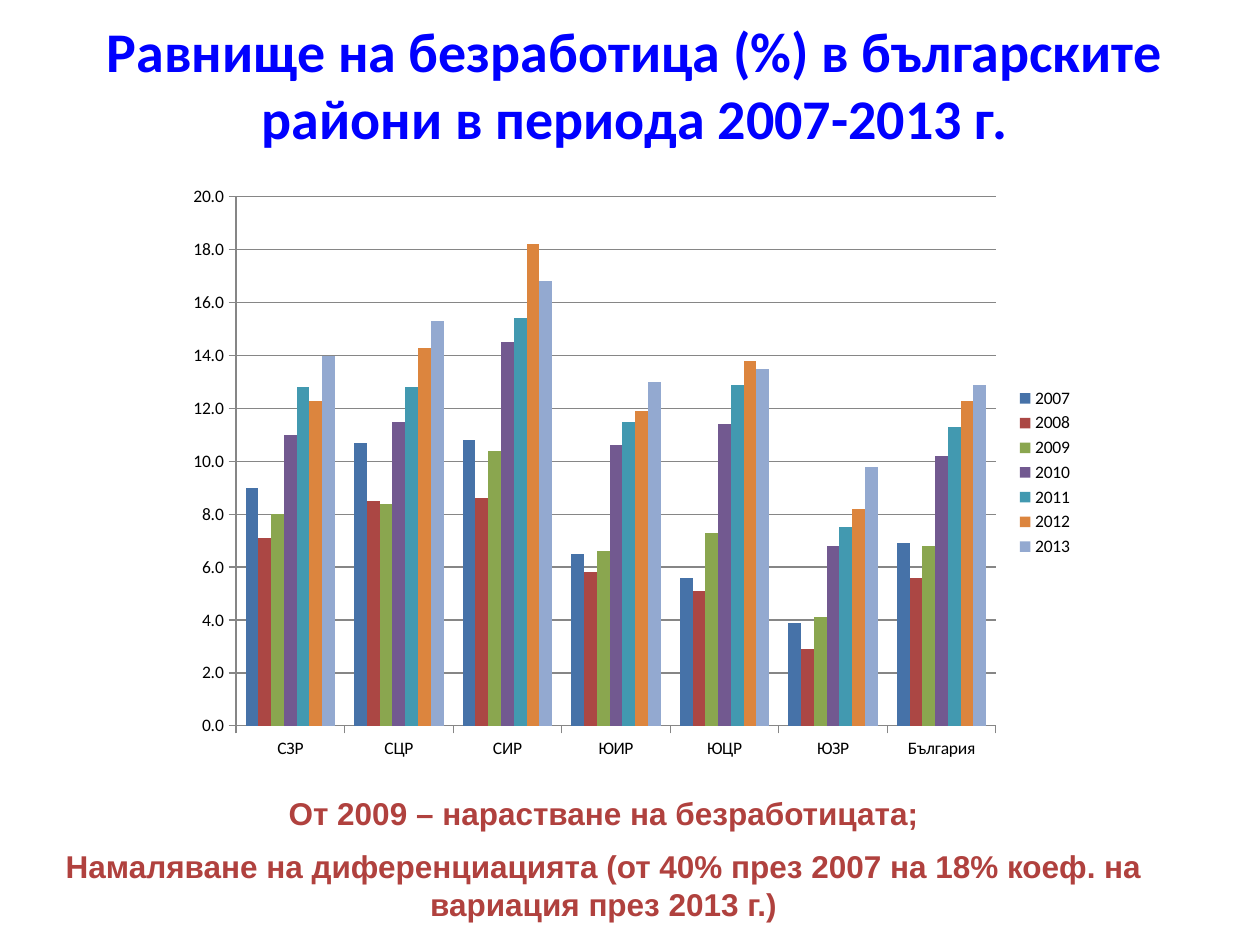
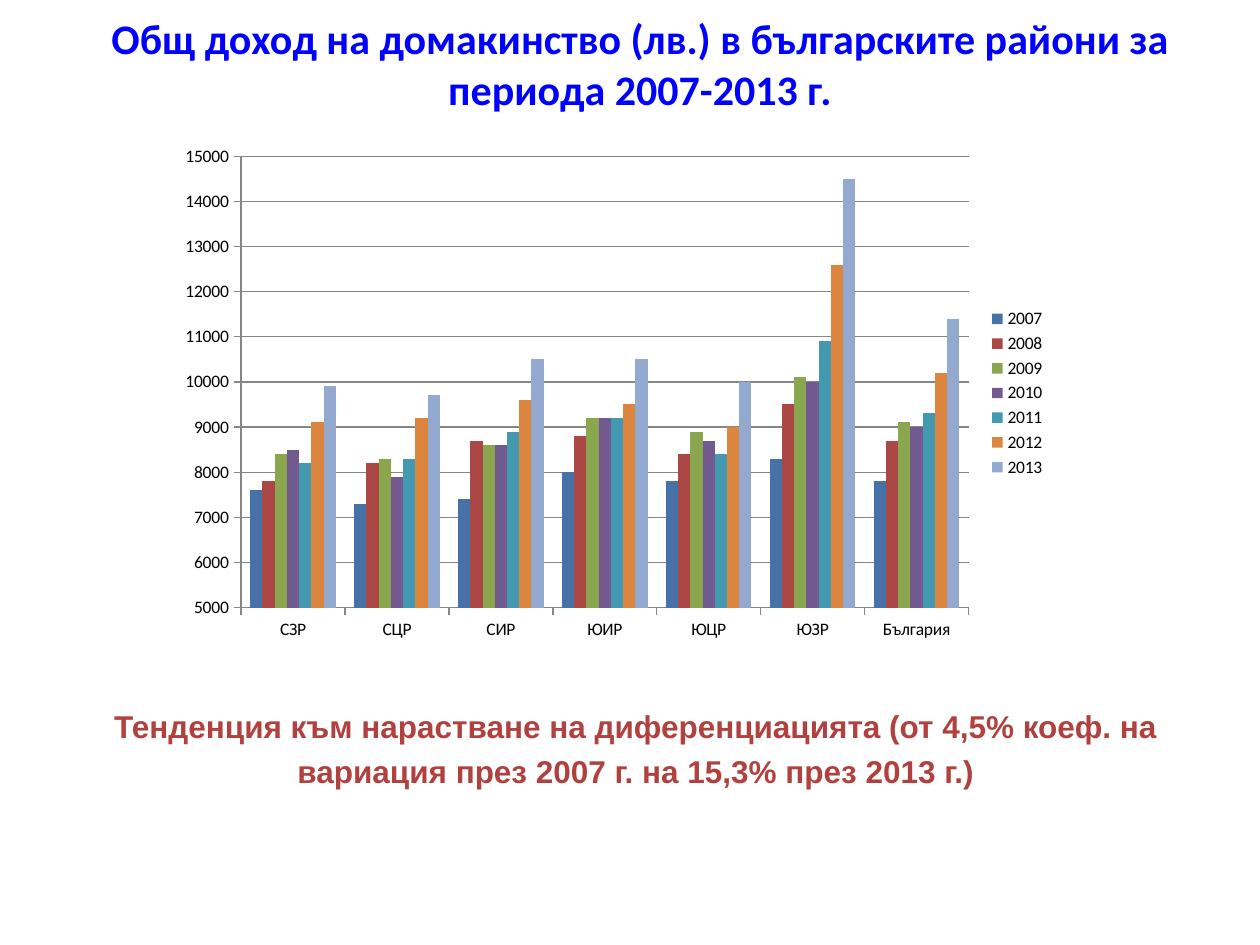
"""Build two slides on jobless rates and income in the Bulgarian regions."""
from dataclasses import dataclass

from pptx import Presentation
from pptx.chart.data import CategoryChartData
from pptx.dml.color import RGBColor
from pptx.enum.chart import XL_CHART_TYPE, XL_LEGEND_POSITION, XL_TICK_MARK
from pptx.enum.text import MSO_ANCHOR, MSO_AUTO_SIZE, PP_ALIGN
from pptx.util import Inches, Pt

COLUMNS = XL_CHART_TYPE.COLUMN_CLUSTERED
RIGHT = XL_LEGEND_POSITION.RIGHT
OUT, NONE = XL_TICK_MARK.OUTSIDE, XL_TICK_MARK.NONE
MIDDLE, TOP = MSO_ANCHOR.MIDDLE, MSO_ANCHOR.TOP
FIXED = MSO_AUTO_SIZE.NONE
CENTER = PP_ALIGN.CENTER


@dataclass(frozen=True)
class Theme:
    """Fonts, type sizes and colours of both slides."""
    head_font: str = "Calibri"
    note_font: str = "Arial"
    note_size: int = 18
    chart_size: int = 10
    paper: str = "FFFFFF"
    head: str = "0000FF"
    note: str = "B0413E"
    ink: str = "000000"
    rule: str = "868686"
    bars: tuple = ("4672A8", "AB4744", "8AA64F", "725990",
                   "4299B0", "DC853E", "93A9D0")


THEME = Theme()
REGIONS = ("СЗР", "СЦР", "СИР", "ЮИР", "ЮЦР", "ЮЗР", "България")
START = 2007

JOBLESS = (
    (9, 10.7, 10.8, 6.5, 5.6, 3.9, 6.9),
    (7.1, 8.5, 8.6, 5.8, 5.1, 2.9, 5.6),
    (8, 8.4, 10.4, 6.6, 7.3, 4.1, 6.8),
    (11, 11.5, 14.5, 10.6, 11.4, 6.8, 10.2),
    (12.8, 12.8, 15.4, 11.5, 12.9, 7.5, 11.3),
    (12.3, 14.3, 18.2, 11.9, 13.8, 8.2, 12.3),
    (14, 15.3, 16.8, 13, 13.5, 9.8, 12.9),
)
INCOME = (
    (7600, 7300, 7400, 8000, 7800, 8300, 7800),
    (7800, 8200, 8700, 8800, 8400, 9500, 8700),
    (8400, 8300, 8600, 9200, 8900, 10100, 9100),
    (8500, 7900, 8600, 9200, 8700, 10000, 9000),
    (8200, 8300, 8900, 9200, 8400, 10900, 9300),
    (9100, 9200, 9600, 9500, 9000, 12600, 10200),
    (9900, 9700, 10500, 10500, 10000, 14500, 11400),
)


def color(code):
    """Turn a hex code into a colour."""
    return RGBColor.from_string(code)


def place(shape, box):
    """Move and size a shape."""
    shape.left, shape.top, shape.width, shape.height = map(Inches, box)


def write(para, text, font, size, tint):
    """Add one bold centred run to a paragraph."""
    para.alignment = CENTER
    run = para.add_run()
    run.text = text
    run.font.name, run.font.size, run.font.bold = font, Pt(size), True
    run.font.color.rgb = color(tint)


def setup(frame, anchor):
    """Make a text frame wrap at a fixed size."""
    frame.word_wrap, frame.auto_size = True, FIXED
    frame.vertical_anchor = anchor


def add_title(slide, text, box, size):
    """Fill the title placeholder."""
    title = slide.shapes.title
    place(title, box)
    setup(title.text_frame, MIDDLE)
    write(title.text_frame.paragraphs[0], text, THEME.head_font, size, THEME.head)


def add_notes(slide, lines, box, spacing):
    """Add the findings below the chart."""
    frame = slide.shapes.add_textbox(*map(Inches, box)).text_frame
    setup(frame, TOP)
    for index, line in enumerate(lines):
        para = frame.add_paragraph() if index else frame.paragraphs[0]
        para.space_before = Pt(THEME.note_size / 2)
        para.line_spacing = spacing
        write(para, line, THEME.note_font, THEME.note_size, THEME.note)


def style_axis(axis):
    """Give an axis its line and outer ticks."""
    axis.major_tick_mark, axis.minor_tick_mark = OUT, NONE
    axis.format.line.color.rgb = color(THEME.rule)
    axis.format.line.width = Pt(0.75)


def add_chart(slide, rows, box, scale, style):
    """Add columns by region with one series a year."""
    data = CategoryChartData(number_format=style)
    data.categories = REGIONS
    for year, row in enumerate(rows, START):
        data.add_series(str(year), row)
    chart = slide.shapes.add_chart(COLUMNS, *map(Inches, box), data).chart
    chart.has_title = False
    chart.font.name, chart.font.size = THEME.head_font, Pt(THEME.chart_size)
    chart.font.color.rgb = color(THEME.ink)
    chart.has_legend = True
    chart.legend.position = RIGHT
    chart.legend.include_in_layout = False

    values = chart.value_axis
    for axis in (chart.category_axis, values):
        style_axis(axis)
    values.minimum_scale, values.maximum_scale, values.major_unit = scale
    values.tick_labels.number_format = style
    values.tick_labels.number_format_is_linked = False
    values.has_major_gridlines = True
    grid = values.major_gridlines.format.line
    grid.color.rgb, grid.width = color(THEME.rule), Pt(0.75)

    plot = chart.plots[0]
    plot.gap_width, plot.vary_by_categories = 150, False
    for series, tint in zip(plot.series, THEME.bars):
        series.invert_if_negative = False
        series.format.fill.solid()
        series.format.fill.fore_color.rgb = color(tint)


def add_slide(deck):
    """Add a plain slide with a title only."""
    slide = deck.slides.add_slide(deck.slide_layouts.get_by_name("Title Only"))
    slide.background.fill.solid()
    slide.background.fill.fore_color.rgb = color(THEME.paper)
    return slide


def main():
    """Build and save the deck."""
    deck = Presentation()
    deck.slide_width, deck.slide_height = Inches(10), Inches(7.5)

    slide = add_slide(deck)
    add_title(slide, "Равнище на безработица (%) в българските райони в периода 2007-2013 г.",
              (0.58, 0.25, 8.92, 0.83), 32)
    add_notes(slide, ("От 2009 – нарастване на безработицата;",
                      "Намаляване на диференциацията (от 40% през 2007 на 18% коеф. на "
                      "вариация през 2013 г.)"),
              (0.33, 6.25, 8.92, 1.16), 1.0)
    add_chart(slide, JOBLESS, (1.39, 1.39, 7.23, 4.72), (0, 20, 2), "0.0")

    slide = add_slide(deck)
    add_title(slide, "Общ доход на домакинство (лв.) в българските райони за периода 2007-2013 г.",
              (0.58, 0, 9, 1), 24)
    add_notes(slide, ("Тенденция към нарастване на диференциацията (от 4,5% коеф. на "
                      "вариация през 2007 г. на 15,3% през 2013 г.)",),
              (0.42, 5.5, 9.25, 0.79), 1.2)
    add_chart(slide, INCOME, (1.33, 1.08, 7.07, 4.08), (5000, 15000, 1000), "0")

    deck.save("out.pptx")


if __name__ == "__main__":
    main()
